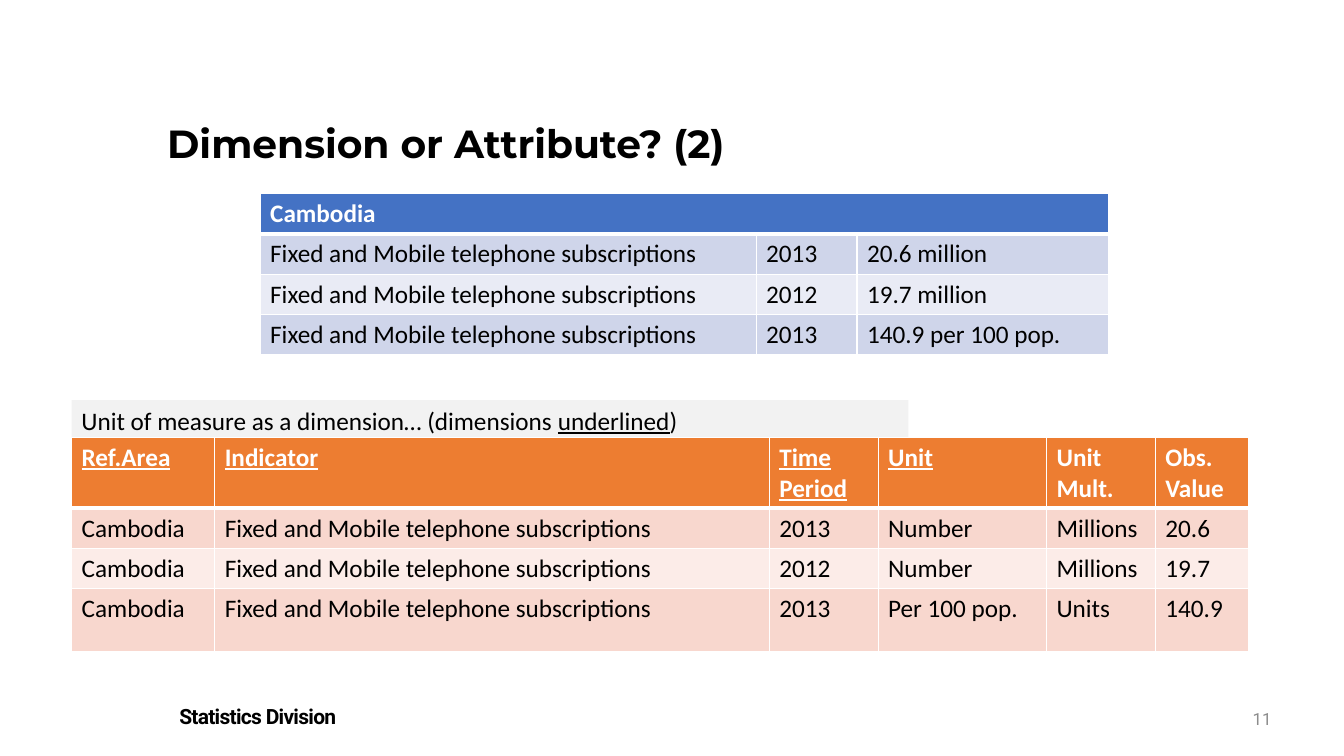
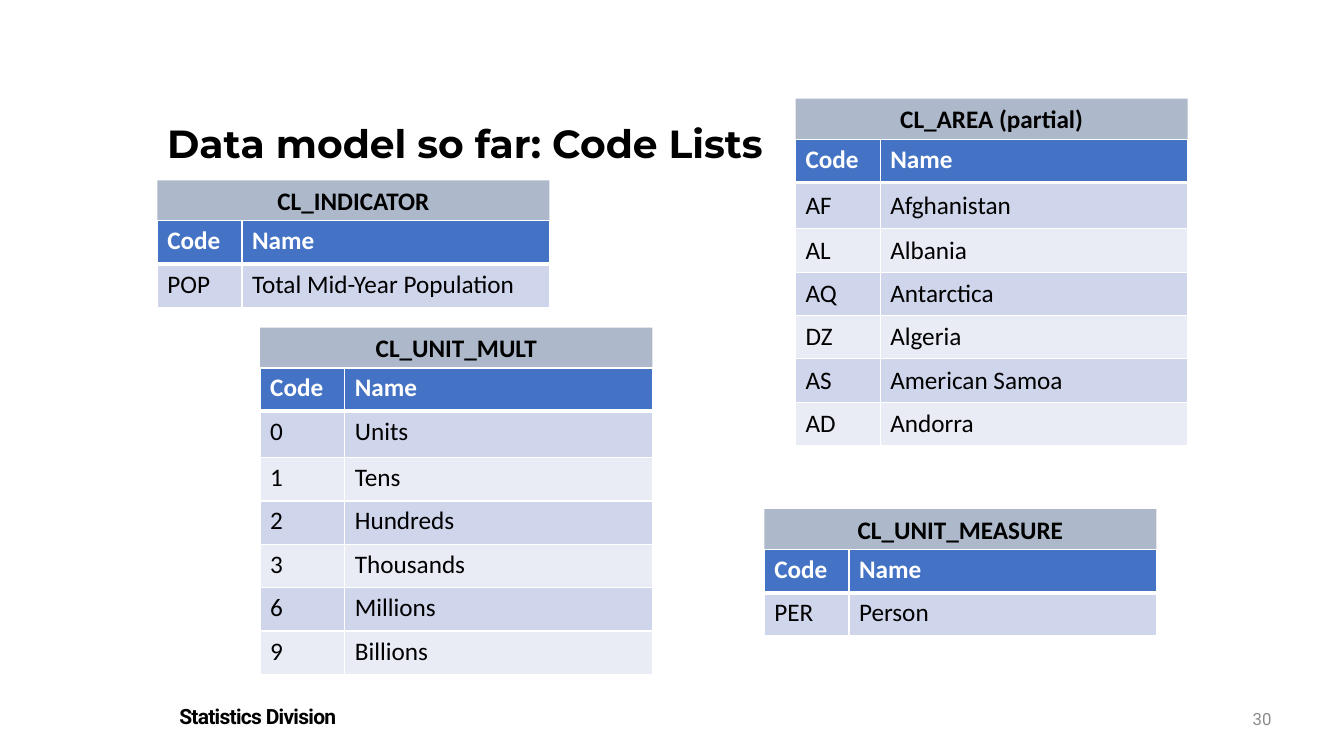
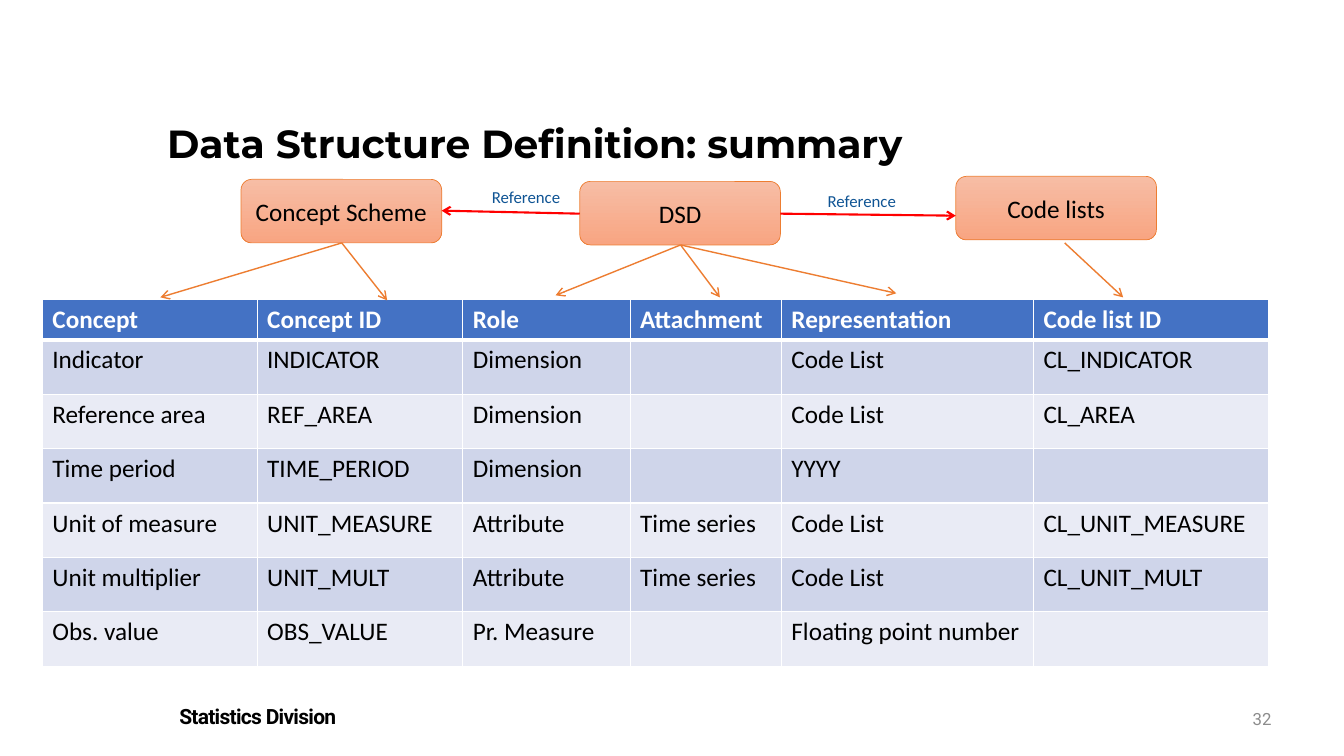
import lxml.etree
import pptx
import pptx.dml.color
import pptx.enum.dml
import pptx.enum.shapes
import pptx.enum.text
import pptx.oxml.ns
import pptx.util

Inches = pptx.util.Inches
Pt = pptx.util.Pt
Shape = pptx.enum.shapes.MSO_SHAPE
Align = pptx.enum.text.PP_ALIGN
Anchor = pptx.enum.text.MSO_ANCHOR
qn = pptx.oxml.ns.qn

BLACK, WHITE, RED = "000000", "FFFFFF", "FF0000"
BLUE, ORANGE = "4472C4", "ED7D31"
BLUE_TABLE = (BLUE, "CFD5EA", "E9EBF5")
ORANGE_TABLE = (ORANGE, "F8D7CE", "FCECE8")
CAPTION_FILL, NOTE_FILL = "ADB9CA", "F2F2F2"
BOX_TOP, BOX_BOTTOM = "F7BDA5", "F8A582"

BODY = {"name": "Calibri", "size": Pt(18), "color": BLACK}
TITLE = {"name": "Montserrat", "size": Pt(28), "bold": True, "color": BLACK}
FOOTER = {"name": "Roboto", "size": Pt(15), "bold": True, "color": BLACK}
PAGE_NUMBER = {"name": "Roboto", "size": Pt(12), "color": "8C8C8C"}
LINK_LABEL = {**BODY, "size": Pt(12), "color": "0F5494"}

SUBSCRIPTIONS = "Fixed and Mobile telephone subscriptions"


def rgb(value):
    return pptx.dml.color.RGBColor.from_string(value)


def set_font(font, style):
    for attribute, value in style.items():
        if attribute == "color":
            font.color.rgb = rgb(value)
        else:
            setattr(font, attribute, value)


def write(frame, runs, style, align=Align.LEFT):
    """Fill the first paragraph; runs is a string or (text, extra style) pairs."""
    paragraph = frame.paragraphs[0]
    paragraph.alignment = align
    for text, extra in [(runs, {})] if isinstance(runs, str) else runs:
        run = paragraph.add_run()
        run.text = text
        set_font(run.font, {**style, **extra})
    return paragraph


def add_text(slide, at, text, style, align=Align.LEFT, anchor=Anchor.TOP):
    frame = slide.shapes.add_textbox(*map(Inches, at)).text_frame
    frame.word_wrap = True
    frame.vertical_anchor = anchor
    return write(frame, text, style, align)


def add_band(slide, at, runs, fill, style=BODY, align=Align.LEFT):
    band = slide.shapes.add_shape(Shape.RECTANGLE, *map(Inches, at))
    band.shadow.inherit = False
    band.fill.solid()
    band.fill.fore_color.rgb = rgb(fill)
    band.line.fill.background()
    band.text_frame.word_wrap = True
    band.text_frame.vertical_anchor = Anchor.TOP
    write(band.text_frame, runs, style, align)


def add_concept_box(slide, left, top, text):
    box = slide.shapes.add_shape(
        Shape.ROUNDED_RECTANGLE, *map(Inches, (left, top, 1.99, 0.63)))
    box.shadow.inherit = False
    box.fill.gradient()
    box.fill.gradient_angle = 270
    for stop, colour in zip(box.fill.gradient_stops, (BOX_TOP, BOX_BOTTOM)):
        stop.color.rgb = rgb(colour)
    box.line.color.rgb = rgb(ORANGE)
    box.line.width = Pt(0.5)
    box.text_frame.word_wrap = True
    box.text_frame.vertical_anchor = Anchor.MIDDLE
    write(box.text_frame, text, BODY, Align.CENTER)


def add_arrow(slide, start, end, colour, width):
    arrow = slide.shapes.add_connector(
        pptx.enum.shapes.MSO_CONNECTOR.STRAIGHT, *map(Inches, start + end))
    arrow.line.color.rgb = rgb(colour)
    arrow.line.width = Pt(width)
    line = arrow.line._get_or_add_ln()
    lxml.etree.SubElement(line, qn("a:tailEnd"), type="arrow")
    lxml.etree.SubElement(arrow._element.spPr, qn("a:effectLst"))


def set_borders(cell, top, bottom):
    """White borders; top and bottom widths in points, sides 1 point."""
    properties = cell._tc.get_or_add_tcPr()
    for side, width in (("L", 1), ("R", 1), ("T", top), ("B", bottom)):
        line = lxml.etree.SubElement(properties, qn("a:ln" + side), w=str(Pt(width)))
        fill = lxml.etree.SubElement(line, qn("a:solidFill"))
        lxml.etree.SubElement(fill, qn("a:srgbClr"), val=WHITE)


def add_table(slide, left, top, widths, heights, rows, colours=BLUE_TABLE,
              underlined=0, anchor=Anchor.TOP):
    """Header row plus banded rows; the first `underlined` headings are underlined."""
    header_fill, *bands = colours
    table = slide.shapes.add_table(
        len(rows), len(widths), Inches(left), Inches(top),
        Inches(sum(widths)), Inches(sum(heights))).table
    for column, width in zip(table.columns, widths):
        column.width = Inches(width)
    for r, (height, texts) in enumerate(zip(heights, rows)):
        table.rows[r].height = Inches(height)
        for c, text in enumerate(texts):
            cell = table.cell(r, c)
            set_borders(cell, 3 if r == 1 else 1, 3 if r == 0 else 1)
            cell.fill.solid()
            if r == 0:
                cell.fill.fore_color.rgb = rgb(header_fill)
                style = {**BODY, "bold": True, "color": WHITE,
                         "underline": c < underlined}
            else:
                cell.fill.fore_color.rgb = rgb(bands[(r - 1) % 2])
                cell.vertical_anchor = anchor
                style = {**BODY, "bold": False}
            if text:
                write(cell.text_frame, text, style)
    return table


def add_code_list(slide, left, top, name, codes, anchor=Anchor.TOP):
    add_band(slide, (left, top, 3.89, 0.4), name, CAPTION_FILL,
             {**BODY, "bold": True}, Align.CENTER)
    heights = [0.43] * (len(codes) + 1)
    if len(codes) > 1:
        heights[1] = 0.46
    add_table(slide, left, top + 0.4, [0.84, 3.05], heights,
              [("Code", "Name"), *codes], anchor=anchor)


def new_slide(deck, title, number):
    slide = deck.slides.add_slide(deck.slide_layouts[6])
    footer = add_text(slide, (1.68, 6.93, 5.84, 0.35), "Statistics Division", FOOTER)
    footer.runs[0].font._element.set("spc", "-50")
    add_text(slide, (1.56, 1.19, 10.86, 0.56), title, TITLE).line_spacing = 0.9
    add_text(slide, (12.07, 6.93, 0.64, 0.4), str(number), PAGE_NUMBER,
             Align.RIGHT, Anchor.MIDDLE)
    return slide


def build_dimension_slide(deck):
    slide = new_slide(deck, "Dimension or Attribute? (2)", 11)
    country = add_table(slide, 2.58, 1.92, [4.92, 1, 2.5], [0.4] * 4, [
        ("Cambodia", "", ""),
        (SUBSCRIPTIONS, "2013", "20.6 million"),
        (SUBSCRIPTIONS, "2012", "19.7 million"),
        (SUBSCRIPTIONS, "2013", "140.9 per 100 pop."),
    ])
    country.cell(0, 0).merge(country.cell(0, 2))
    add_band(slide, (0.71, 3.97, 8.3, 0.4), [
        ("Unit of measure as a dimension… (dimensions ", {}),
        ("underlined", {"underline": True}),
        (")", {}),
    ], NOTE_FILL)
    add_table(slide, 0.71, 4.34, [1.42, 5.5, 1.08, 1.67, 1.08, 0.92],
              [0.7, 0.4, 0.4, 0.62], [
        ("Ref.Area", "Indicator", "Time Period", "Unit", "Unit Mult.", "Obs. Value"),
        ("Cambodia", SUBSCRIPTIONS, "2013", "Number", "Millions", "20.6"),
        ("Cambodia", SUBSCRIPTIONS, "2012", "Number", "Millions", "19.7"),
        ("Cambodia", SUBSCRIPTIONS, "2013", "Per 100 pop.", "Units", "140.9"),
    ], ORANGE_TABLE, underlined=4)


def build_code_lists_slide(deck):
    slide = new_slide(deck, "Data model so far: Code Lists", 30)
    add_code_list(slide, 1.56, 1.79, "CL_INDICATOR",
                  [("POP", "Total Mid-Year Population")])
    add_code_list(slide, 2.58, 3.25, "CL_UNIT_MULT", [
        ("0", "Units"), ("1", "Tens"), ("2", "Hundreds"),
        ("3", "Thousands"), ("6", "Millions"), ("9", "Billions")])
    add_code_list(slide, 7.89, 0.98, "CL_AREA (partial)", [
        ("AF", "Afghanistan"), ("AL", "Albania"), ("AQ", "Antarctica"),
        ("DZ", "Algeria"), ("AS", "American Samoa"), ("AD", "Andorra")],
        Anchor.MIDDLE)
    add_code_list(slide, 7.58, 5.05, "CL_UNIT_MEASURE", [("PER", "Person")])


def build_summary_slide(deck):
    slide = new_slide(deck, "Data Structure Definition: summary", 32)
    add_table(slide, 0.42, 2.97, [2.13, 2.04, 1.66, 1.5, 2.5, 2.33],
              [0.4] + [0.54] * 6, [
        ("Concept", "Concept ID", "Role", "Attachment", "Representation", "Code list ID"),
        ("Indicator", "INDICATOR", "Dimension", "", "Code List", "CL_INDICATOR"),
        ("Reference area", "REF_AREA", "Dimension", "", "Code List", "CL_AREA"),
        ("Time period", "TIME_PERIOD", "Dimension", "", "YYYY", ""),
        ("Unit of measure", "UNIT_MEASURE", "Attribute", "Time series", "Code List",
         "CL_UNIT_MEASURE"),
        ("Unit multiplier", "UNIT_MULT", "Attribute", "Time series", "Code List",
         "CL_UNIT_MULT"),
        ("Obs. value", "OBS_VALUE", "Pr. Measure", "", "Floating point number", ""),
    ])
    for left, top, text in ((2.39, 1.78, "Concept Scheme"), (5.75, 1.8, "DSD"),
                            (9.48, 1.75, "Code lists")):
        add_concept_box(slide, left, top, text)

    column_arrows = {
        (3.39, 2.41): [(1.59, 2.95), (3.84, 2.98)],
        (6.75, 2.43): [(5.51, 2.93), (7.14, 2.95), (8.89, 2.91)],
        (10.56, 2.41): [(11.14, 2.95)],
    }
    for start, ends in column_arrows.items():
        for end in ends:
            add_arrow(slide, start, end, ORANGE, 1)
    add_arrow(slide, (5.75, 2.12), (4.38, 2.09), RED, 1.5)
    add_arrow(slide, (7.74, 2.12), (9.48, 2.14), RED, 1.5)
    for left, top in ((4.78, 1.8), (8.11, 1.84)):
        add_text(slide, (left, top, 0.99, 0.3), "Reference", LINK_LABEL)


def main():
    deck = pptx.Presentation()
    deck.slide_width = Inches(13.33)
    deck.slide_height = Inches(7.5)
    build_dimension_slide(deck)
    build_code_lists_slide(deck)
    build_summary_slide(deck)
    deck.save("out.pptx")


if __name__ == "__main__":
    main()
